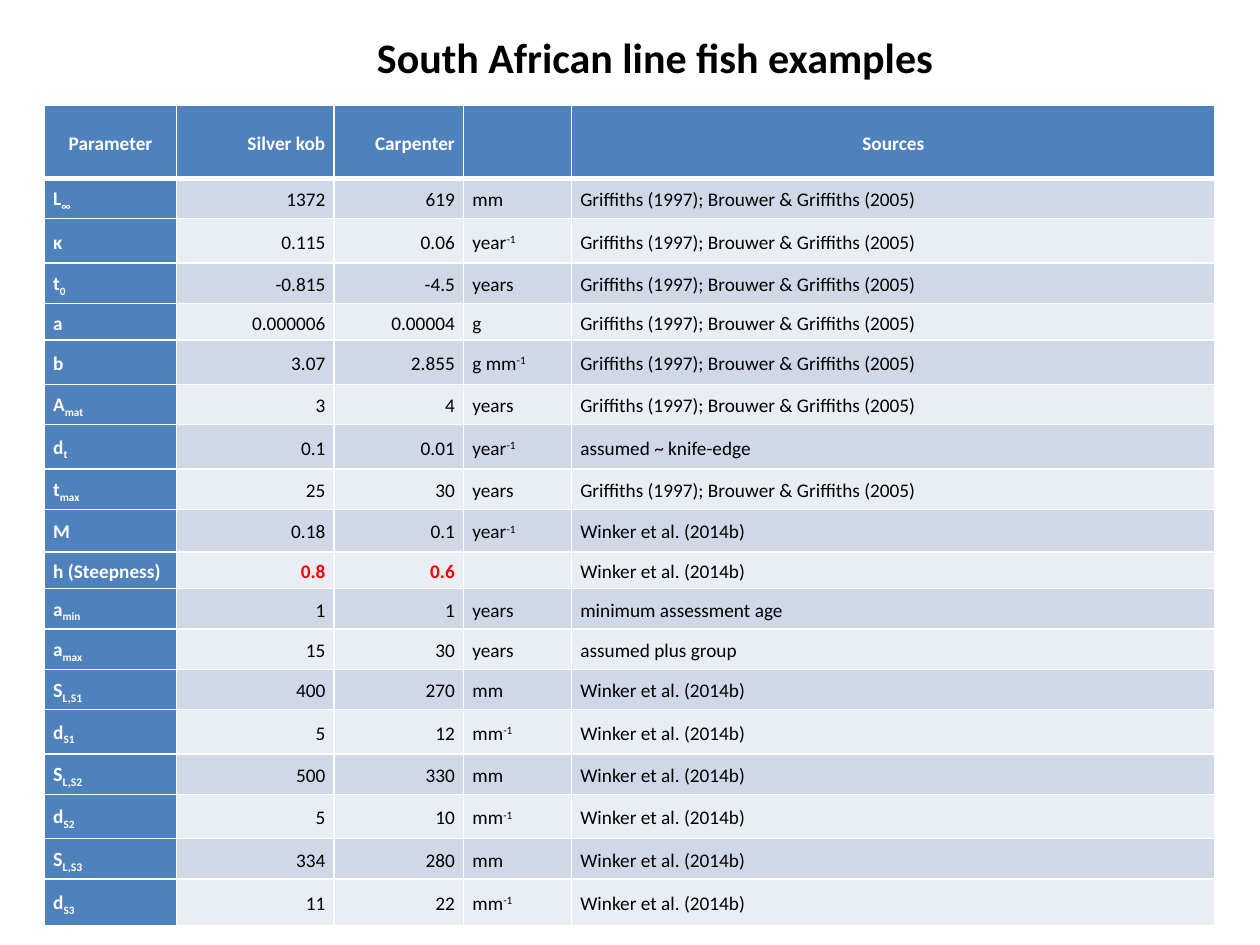
from dataclasses import dataclass

from lxml import etree
from pptx import Presentation
from pptx.dml.color import RGBColor
from pptx.enum.text import MSO_ANCHOR, MSO_AUTO_SIZE, PP_ALIGN
from pptx.oxml.ns import qn
from pptx.util import Pt

LEFT, CENTER, RIGHT, JUSTIFY = PP_ALIGN.LEFT, PP_ALIGN.CENTER, PP_ALIGN.RIGHT, PP_ALIGN.JUSTIFY
MIDDLE = MSO_ANCHOR.MIDDLE

FONT = "Calibri"
WHITE = RGBColor(0xFF, 0xFF, 0xFF)
BLACK = RGBColor(0, 0, 0)
RED = RGBColor(0xFF, 0, 0)
BLUE = RGBColor(0x4F, 0x81, 0xBD)
BANDS = RGBColor(0xD0, 0xD8, 0xE8), RGBColor(0xE9, 0xED, 0xF4)

SUBSCRIPT, SUPERSCRIPT = -25, 30
BODY_SIZE = 11
HEADERS = ["Parameter", "Silver kob", "Carpenter", "", "Sources"]
HEADER_ALIGNS = [CENTER, RIGHT, RIGHT, LEFT, CENTER]
BODY_ALIGNS = [LEFT, RIGHT, RIGHT, LEFT, LEFT]
COLUMN_WIDTHS = [75.6, 90, 74, 61.7, 367.7]
HEADER_HEIGHT = 41.5
PLAIN, SUB, SUP = 21, 23.1, 25.3  # row heights by the raised or lowered text they hold

LINE_FISH = "Griffiths (1997); Brouwer & Griffiths (2005)"
WINKER = "Winker et al. (2014b)"


@dataclass
class Parameter:
    symbol: str
    index: str
    kob: str
    carpenter: str
    unit: str
    power: str
    source: str
    height: float
    emphasis: bool = False


@dataclass
class Style:
    color: RGBColor
    bold: bool
    size: float = BODY_SIZE


PARAMETERS = [
    Parameter("L", "∞", "1372", "619", "mm", "", LINE_FISH, SUB),
    Parameter("κ", "", "0.115", "0.06", "year", "-1", LINE_FISH, SUP),
    Parameter("t", "0", "-0.815", "-4.5", "years", "", LINE_FISH, SUB),
    Parameter("a", "", "0.000006", "0.00004", "g", "", LINE_FISH, PLAIN),
    Parameter("b", "", "3.07", "2.855", "g mm", "-1", LINE_FISH, SUP),
    Parameter("A", "mat", "3", "4", "years", "", LINE_FISH, SUB),
    Parameter("d", "t", "0.1", "0.01", "year", "-1", "assumed ~ knife-edge", SUP),
    Parameter("t", "max", "25", "30", "years", "", LINE_FISH, SUB),
    Parameter("M", "", "0.18", "0.1", "year", "-1", WINKER, 24.3),
    Parameter("h (Steepness)", "", "0.8", "0.6", "", "", WINKER, PLAIN, True),
    Parameter("a", "min", "1", "1", "years", "", "minimum assessment age", SUB),
    Parameter("a", "max", "15", "30", "years", "", "assumed plus group", SUB),
    Parameter("S", "L,S1", "400", "270", "mm", "", WINKER, SUB),
    Parameter("d", "S1", "5", "12", "mm", "-1", WINKER, SUP),
    Parameter("S", "L,S2", "500", "330", "mm", "", WINKER, SUB),
    Parameter("d", "S2", "5", "10", "mm", "-1", WINKER, SUP),
    Parameter("S", "L,S3", "334", "280", "mm", "", WINKER, SUB),
    Parameter("d", "S3", "11", "22", "mm", "-1", WINKER, 26.5),
]


def add_borders(cell, top: float, bottom: float) -> None:
    properties = cell._tc.get_or_add_tcPr()
    for side, width in (("L", 1), ("R", 1), ("T", top), ("B", bottom)):
        line = etree.SubElement(properties, qn(f"a:ln{side}"), w=str(Pt(width)))
        fill = etree.SubElement(line, qn("a:solidFill"))
        etree.SubElement(fill, qn("a:srgbClr"), val=str(WHITE))


def add_span(para, text: str, style: Style, baseline: int = 0) -> None:
    span = para.add_run()
    span.text = text
    span.font.name = FONT
    span.font.size = Pt(style.size)
    span.font.bold = style.bold
    span.font.color.rgb = style.color
    if baseline:
        span.font._element.set("baseline", str(baseline * 1000))


def fill_cell(cell, text: str, align: PP_ALIGN, style: Style, fill: RGBColor,
              shifted: str = "", baseline: int = 0, top: float = 1, bottom: float = 1) -> None:
    add_borders(cell, top, bottom)
    cell.fill.solid()
    cell.fill.fore_color.rgb = fill
    cell.vertical_anchor = MIDDLE
    cell.margin_left = cell.margin_right = Pt(5)
    cell.margin_top = cell.margin_bottom = 0
    para = cell.text_frame.paragraphs[0]
    para.alignment = align
    para.line_spacing = 1.15
    if text:
        add_span(para, text, style)
    else:
        # Keeps an empty cell from stretching its row
        etree.SubElement(para._p, qn("a:endParaRPr"), sz=str(BODY_SIZE * 100))
    if shifted:
        add_span(para, shifted, style, baseline)


def add_title(page, text: str) -> None:
    title = page.shapes.title
    title.left, title.top, title.width, title.height = Pt(206.6), Pt(14.4), Pt(335.5), Pt(36)
    frame = title.text_frame
    frame.text = text
    frame.word_wrap = False
    frame.auto_size = MSO_AUTO_SIZE.SHAPE_TO_FIT_TEXT
    frame.vertical_anchor = MIDDLE
    para = frame.paragraphs[0]
    para.alignment = CENTER
    font = para.runs[0].font
    font.name, font.size, font.bold = FONT, Pt(24), True
    font.color.rgb = BLACK


def add_parameter_table(page) -> None:
    heights = [HEADER_HEIGHT] + [parameter.height for parameter in PARAMETERS]
    table = page.shapes.add_table(len(heights), len(HEADERS), Pt(25.4), Pt(60.4),
                                  Pt(sum(COLUMN_WIDTHS)), Pt(sum(heights))).table
    for column, width in zip(table.columns, COLUMN_WIDTHS):
        column.width = Pt(width)
    for row, height in zip(table.rows, heights):
        row.height = Pt(height)

    # Header row
    for column, (text, align) in enumerate(zip(HEADERS, HEADER_ALIGNS)):
        fill_cell(table.cell(0, column), text, align, Style(WHITE, True), BLUE, bottom=3)

    # Parameter rows
    for number, item in enumerate(PARAMETERS, start=1):
        top = 3 if number == 1 else 1
        band = BANDS[(number - 1) % 2]
        plain = Style(BLACK, False)
        value = Style(RED, True) if item.emphasis else plain
        selectivity = item.symbol == "S"
        label = Style(WHITE, True, 11.5 if selectivity else BODY_SIZE)
        fill_cell(table.cell(number, 0), item.symbol, JUSTIFY if selectivity else LEFT,
                  label, BLUE, item.index, SUBSCRIPT, top=top)
        entries = [(item.kob, value, ""), (item.carpenter, value, ""),
                   (item.unit, plain, item.power), (item.source, plain, "")]
        for column, (text, style, power) in enumerate(entries, start=1):
            fill_cell(table.cell(number, column), text, BODY_ALIGNS[column], style, band,
                      power, SUPERSCRIPT, top=top)


def main() -> None:
    deck = Presentation()
    deck.slide_width, deck.slide_height = Pt(720), Pt(540)
    page = deck.slides.add_slide(deck.slide_layouts[5])
    add_title(page, "South African line fish examples")
    add_parameter_table(page)
    deck.save("out.pptx")


if __name__ == "__main__":
    main()
